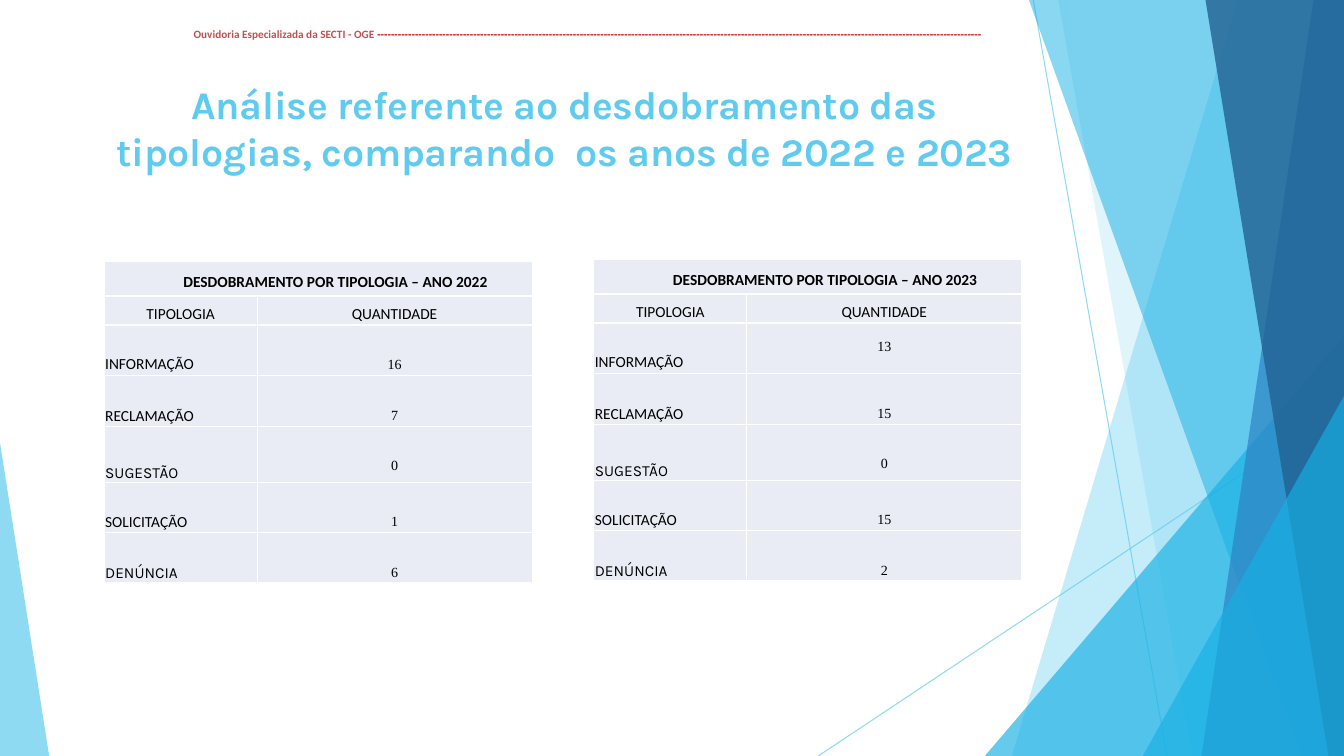
from dataclasses import dataclass

from lxml.etree import SubElement
from pptx import Presentation
from pptx.dml.color import RGBColor
from pptx.enum.shapes import MSO_CONNECTOR as Connector, MSO_SHAPE as Preset
from pptx.enum.text import MSO_ANCHOR as Anchor, PP_ALIGN as Align
from pptx.oxml import parse_xml
from pptx.oxml.ns import nsdecls, qn
from pptx.util import Cm, Pt


@dataclass(frozen=True)
class Theme:
    sky: str = "5FCBEF"
    cyan: str = "17B0E4"
    blue: str = "2E83C3"
    navy: str = "226292"
    brick: str = "C0504D"
    red: str = "C00000"
    black: str = "000000"
    cell: str = "E9ECF4"
    border: str = "FFFFFF"
    sans: str = "Calibri"
    display: str = "Karla"
    serif: str = "Times New Roman"
    banner_size: float = 8
    title_size: float = 28
    label_size: float = 11
    number_size: float = 10
    label_line: float = 12.8


THEME = Theme()
PAGE_WIDTH, PAGE_HEIGHT = 33.87, 19.05
COLUMN_WIDTHS = (3.86, 6.93)
ROW_HEIGHTS = (0.88, 0.73, 1.28, 1.27, 1.41, 1.27, 1.27)


@dataclass(frozen=True)
class Ray:
    start: tuple[float, float]
    end: tuple[float, float]


@dataclass(frozen=True)
class Facet:
    top_left: float
    bottom_left: float
    color: str
    opacity: int


@dataclass(frozen=True)
class Wedge:
    left: float
    top: float
    width: float
    apex: float
    color: str
    opacity: int


@dataclass(frozen=True)
class Category:
    name: str
    font: str = THEME.sans
    label_top: float = 0.8


@dataclass(frozen=True)
class YearTable:
    year: int
    left: float
    top: float
    counts: tuple[int, ...]
    first_count_top: float = 0.81


RAYS = (Ray((26.04, 0), (29.41, PAGE_HEIGHT)), Ray((PAGE_WIDTH, 10.24), (20.62, PAGE_HEIGHT)))
BACKDROP = (
    Facet(31.19, 25.5, THEME.sky, 36),
    Facet(26.67, 30.05, THEME.sky, 20),
    Wedge(24.82, 8.46, 9.05, 1, THEME.cyan, 66),
    Facet(25.93, 32.79, THEME.cyan, 50),
    Facet(33.1, 30.28, THEME.blue, 70),
    Facet(30.38, 33.48, THEME.navy, 80),
    Wedge(28.8, 9.98, 5.07, 1, THEME.cyan, 66),
    Wedge(0, 11.15, 1.24, 0, THEME.sky, 70),
)
CATEGORIES = (
    Category("INFORMAÇÃO", label_top=0.78),
    Category("RECLAMAÇÃO"),
    Category("SUGESTÃO", THEME.display, 0.95),
    Category("SOLICITAÇÃO"),
    Category("DENÚNCIA", THEME.display),
)
YEAR_TABLES = (
    YearTable(2022, 2.62, 6.58, (16, 7, 0, 1, 6)),
    YearTable(2023, 14.96, 6.53, (13, 15, 0, 15, 2), first_count_top=0.41),
)


def set_opacity(properties, opacity: int) -> None:
    for color in properties.iter(qn("a:srgbClr")):
        SubElement(color, qn("a:alpha"), val=str(opacity * 1000))


def style_font(font, name: str, size: float, color: str, bold: bool = False) -> None:
    font.name = name
    font.size = Pt(size)
    font.bold = bold
    font.color.rgb = RGBColor.from_string(color)


def draw_ray(page, ray: Ray) -> None:
    line = page.shapes.add_connector(Connector.STRAIGHT, *map(Cm, ray.start + ray.end))
    line.line.color.rgb = RGBColor.from_string(THEME.sky)
    line.line.width = Pt(0.75)
    properties = line._element.spPr
    set_opacity(properties, 70)
    SubElement(properties, qn("a:effectLst"))


def paint(shape, color: str, opacity: int) -> None:
    shape.shadow.inherit = False
    shape.fill.solid()
    shape.fill.fore_color.rgb = RGBColor.from_string(color)
    shape.line.fill.background()
    set_opacity(shape._element.spPr, opacity)


def draw_facet(page, facet: Facet) -> None:
    builder = page.shapes.build_freeform(Cm(facet.top_left), 0)
    corners = ((PAGE_WIDTH, 0), (PAGE_WIDTH, PAGE_HEIGHT), (facet.bottom_left, PAGE_HEIGHT))
    builder.add_line_segments([(Cm(x), Cm(y)) for x, y in corners], close=True)
    paint(builder.convert_to_shape(), facet.color, facet.opacity)


def draw_wedge(page, wedge: Wedge) -> None:
    shape = page.shapes.add_shape(
        Preset.ISOSCELES_TRIANGLE, Cm(wedge.left), Cm(wedge.top),
        Cm(wedge.width), Cm(PAGE_HEIGHT - wedge.top))
    shape.adjustments[0] = wedge.apex
    paint(shape, wedge.color, wedge.opacity)


def add_text_box(page, left: float, top: float, width: float, height: float):
    box = page.shapes.add_textbox(Cm(left), Cm(top), Cm(width), Cm(height))
    frame = box.text_frame
    frame.word_wrap = True
    frame.margin_left = frame.margin_right = frame.margin_bottom = 0
    frame.margin_top = Cm(0.03)
    return frame


def draw_banner(page) -> None:
    para = add_text_box(page, 4.88, 0.66, 20.52, 0.38).paragraphs[0]
    style_font(para.font, THEME.sans, THEME.banner_size, THEME.brick, bold=True)
    para.add_run().text = "Ouvidoria Especializada da SECTI - OGE "
    dashes = para.add_run()
    dashes.text = "-" * 176
    dashes.font.color.rgb = RGBColor.from_string(THEME.red)


def draw_title(page) -> None:
    frame = add_text_box(page, 2.67, 1.98, 23.09, 2.44)
    frame.vertical_anchor = Anchor.MIDDLE
    para = frame.paragraphs[0]
    para.alignment = Align.CENTER
    style_font(para.font, THEME.display, THEME.title_size, THEME.sky, bold=True)
    span = para.add_run()
    span.text = "Análise referente ao desdobramento das tipologias, comparando  os anos de 2022 e 2023"
    span._r.get_or_add_rPr().set("spc", "-10")


def style_cell(cell) -> None:
    cell.fill.solid()
    cell.fill.fore_color.rgb = RGBColor.from_string(THEME.cell)
    for index, side in enumerate(("lnL", "lnR", "lnT", "lnB")):
        edge = parse_xml(
            f'<a:{side} {nsdecls("a")} w="12700"><a:solidFill>'
            f'<a:srgbClr val="{THEME.border}"/></a:solidFill></a:{side}>')
        cell._tc.get_or_add_tcPr().insert(index, edge)


def write_cell(cell, text: str, top: float, left: float = 0, font: str = THEME.sans,
               bold: bool = False, centred: bool = False) -> None:
    cell.margin_left, cell.margin_top = Cm(left), Cm(top)
    cell.margin_right = cell.margin_bottom = 0
    para = cell.text_frame.paragraphs[0]
    para.add_run().text = text
    para.alignment = Align.CENTER if centred else Align.LEFT
    is_number = font == THEME.serif
    style_font(para.font, font, THEME.number_size if is_number else THEME.label_size, THEME.black, bold)
    if not is_number:
        para.line_spacing = Pt(THEME.label_line)


def draw_year_table(page, data: YearTable) -> None:
    table = page.shapes.add_table(
        len(ROW_HEIGHTS), len(COLUMN_WIDTHS), Cm(data.left), Cm(data.top),
        Cm(sum(COLUMN_WIDTHS)), Cm(sum(ROW_HEIGHTS))).table
    table.first_row = table.horz_banding = False
    for column, width in zip(table.columns, COLUMN_WIDTHS):
        column.width = Cm(width)
    for row, height in zip(table.rows, ROW_HEIGHTS):
        row.height = Cm(height)
        for cell in row.cells:
            style_cell(cell)
    table.cell(0, 0).merge(table.cell(0, 1))
    write_cell(table.cell(0, 0), f"DESDOBRAMENTO POR TIPOLOGIA – ANO {data.year}", 0.33, 2, bold=True)
    write_cell(table.cell(1, 0), "TIPOLOGIA", 0.25, 1.07)
    write_cell(table.cell(1, 1), "QUANTIDADE", 0.25, centred=True)
    for index, (category, count) in enumerate(zip(CATEGORIES, data.counts)):
        count_top = 0.81 if index else data.first_count_top
        write_cell(table.cell(index + 2, 0), category.name, category.label_top, 0.03, category.font)
        write_cell(table.cell(index + 2, 1), str(count), count_top, font=THEME.serif, centred=True)


def main() -> None:
    deck = Presentation()
    deck.slide_width, deck.slide_height = Cm(PAGE_WIDTH), Cm(PAGE_HEIGHT)
    page = deck.slides.add_slide(deck.slide_layouts[6])
    for ray in RAYS:
        draw_ray(page, ray)
    for piece in BACKDROP:
        if isinstance(piece, Facet):
            draw_facet(page, piece)
        else:
            draw_wedge(page, piece)
    draw_banner(page)
    draw_title(page)
    for data in YEAR_TABLES:
        draw_year_table(page, data)
    deck.save("out.pptx")


if __name__ == "__main__":
    main()
